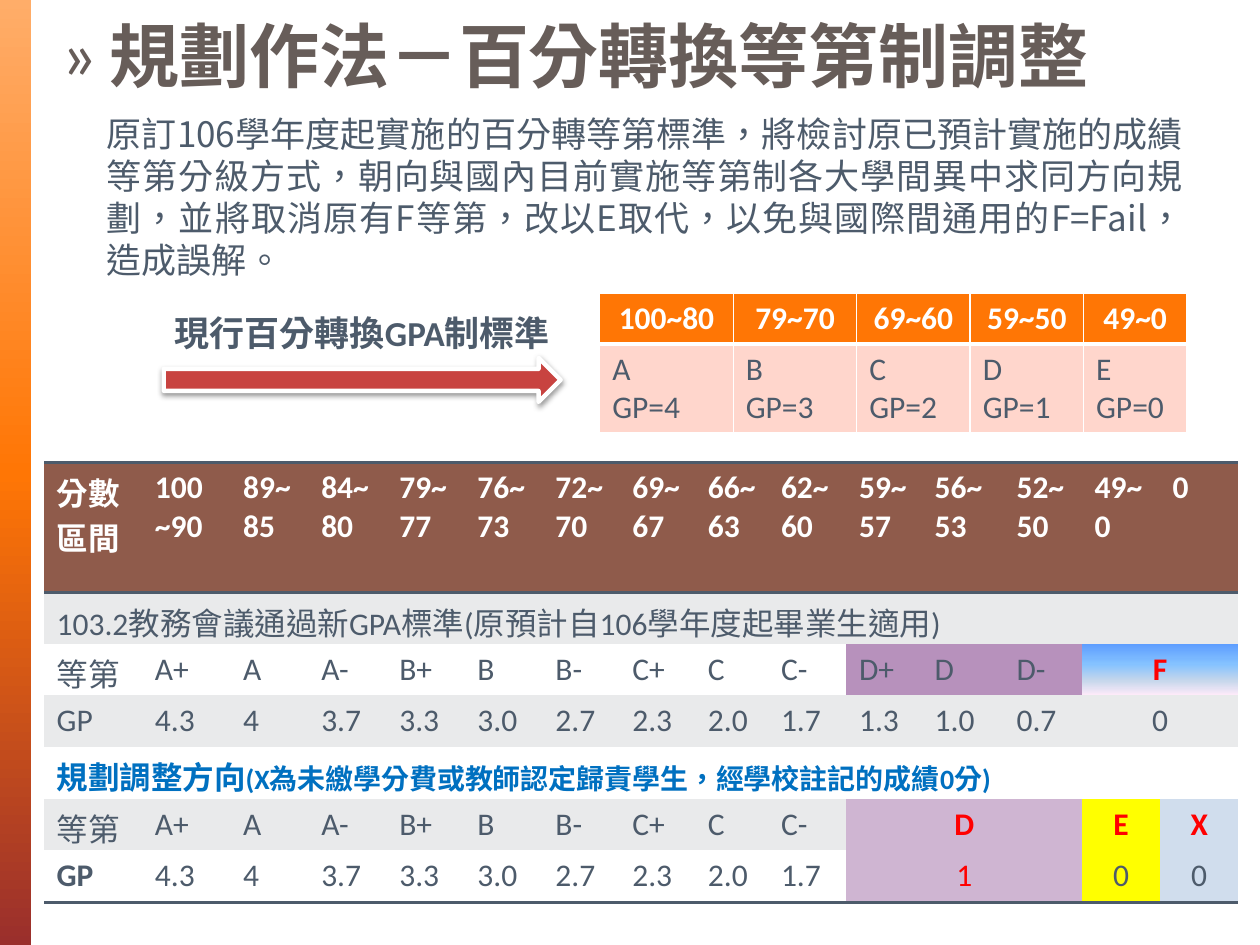
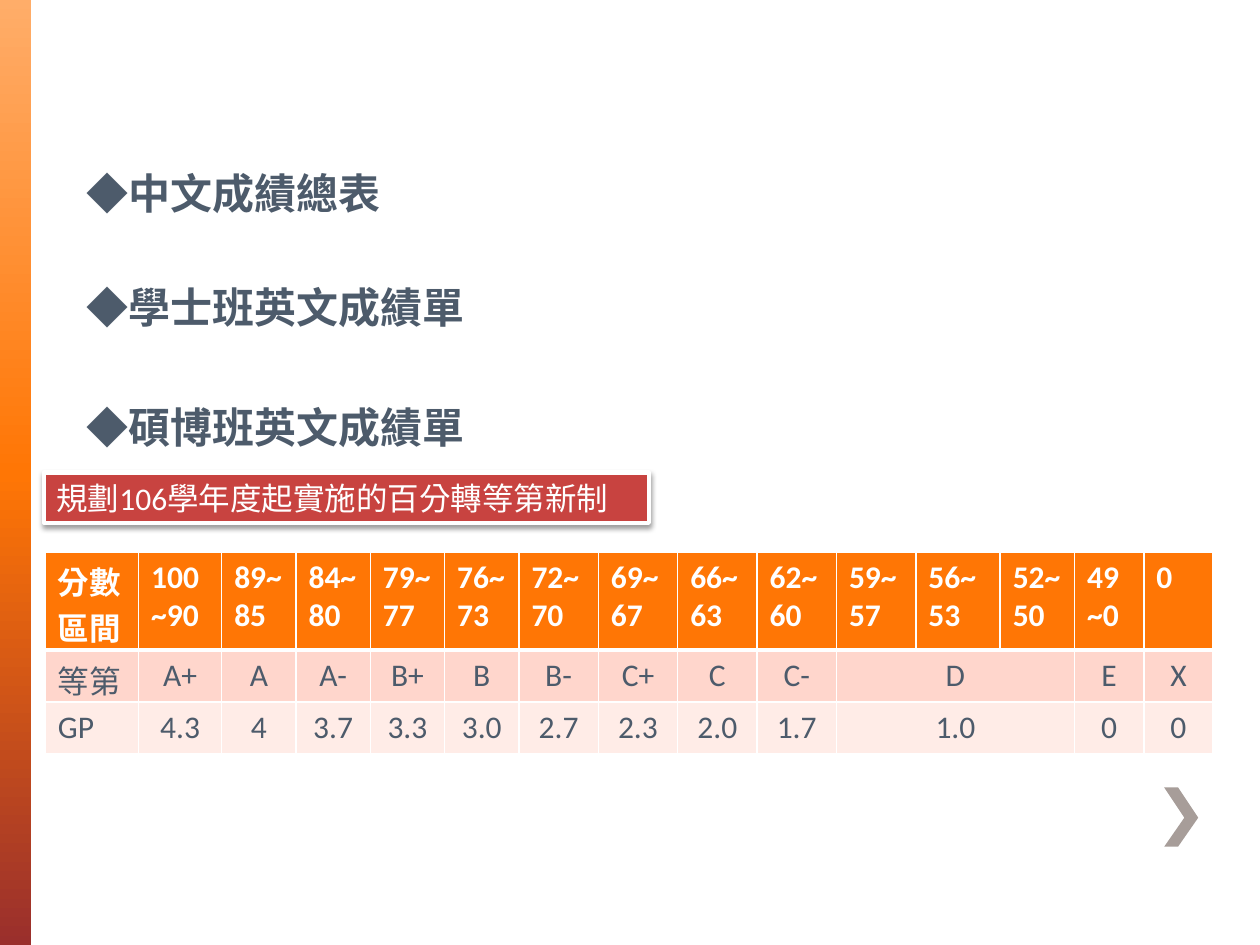
from dataclasses import dataclass, replace

from lxml.etree import SubElement
from pptx import Presentation
from pptx.dml.color import RGBColor
from pptx.enum.shapes import MSO_SHAPE
from pptx.enum.text import MSO_ANCHOR, PP_ALIGN
from pptx.oxml.ns import qn
from pptx.util import Inches, Pt

WHITE = RGBColor(0xFF, 0xFF, 0xFF)
SLATE = RGBColor(0x4D, 0x5B, 0x6B)
TAUPE = RGBColor(0x67, 0x5D, 0x59)
STONE = RGBColor(0xA7, 0x9D, 0x99)
APRICOT = RGBColor(0xFF, 0xAD, 0x69)
ORANGE = RGBColor(0xFF, 0x76, 0x05)
MAROON = RGBColor(0x9A, 0x2F, 0x2C)
CRIMSON = RGBColor(0xC8, 0x43, 0x40)
BROWN = RGBColor(0x8F, 0x5B, 0x4B)
GRAY = RGBColor(0xE9, 0xEA, 0xEB)
PINK = RGBColor(0xFF, 0xD6, 0xCC)
PALE_PINK = RGBColor(0xFF, 0xEC, 0xE7)
PURPLE = RGBColor(0xB7, 0x91, 0xBC)
LILAC = RGBColor(0xCF, 0xB5, 0xD2)
YELLOW = RGBColor(0xFF, 0xFF, 0x00)
PALE_BLUE = RGBColor(0xD0, 0xDD, 0xED)
RED = RGBColor(0xFF, 0x00, 0x00)
BLUE = RGBColor(0x00, 0x70, 0xC0)

BAND_STOPS = ((0, APRICOT), (50, ORANGE), (100, MAROON))
SKY_STOPS = (
    (0, RGBColor(0x5E, 0x9E, 0xFF)),
    (28, RGBColor(0x79, 0xB7, 0xFF)),
    (40, RGBColor(0x85, 0xC2, 0xFF)),
    (70, RGBColor(0xC4, 0xD6, 0xEB)),
    (100, RGBColor(0xFF, 0xEB, 0xFA)),
)

LATIN = "Calibri"
CJK = "Noto Sans CJK SC"
NO_GRID_STYLE = "{2D5ABB26-0587-4C30-8999-92F81FD0307C}"


@dataclass(frozen=True)
class Look:
    fill: object = None
    color: RGBColor = SLATE
    bold: bool = False
    align: object = PP_ALIGN.LEFT
    size: int = 18
    font: str = LATIN
    borders: tuple = ()


def add_color(parent, color):
    return SubElement(parent, qn("a:srgbClr"), val=str(color))


def paint(fill, properties, paint_with):
    if paint_with is None:
        fill.background()
    elif isinstance(paint_with, RGBColor):
        fill.solid()
        fill.fore_color.rgb = paint_with
    else:
        fill.background()
        gradient = properties.find(qn("a:noFill"))
        gradient.tag = qn("a:gradFill")
        stops = SubElement(gradient, qn("a:gsLst"))
        for percent, color in paint_with:
            add_color(SubElement(stops, qn("a:gs"), pos=str(percent * 1000)), color)
        SubElement(gradient, qn("a:lin"), ang="5400000", scaled="0")


class Deck:
    def __init__(self):
        self.presentation = Presentation()
        self.presentation.slide_width = Inches(10)
        self.presentation.slide_height = Inches(7.5)
        self.slide = None

    def new_slide(self):
        self.slide = self.presentation.slides.add_slide(self.presentation.slide_layouts[6])
        self.shape(MSO_SHAPE.RECTANGLE, 0, 0, 0.25, 7.5, BAND_STOPS)

    def style_run(self, run, look):
        run.font.size = Pt(look.size)
        run.font.bold = look.bold
        run.font.color.rgb = look.color
        run.font.name = look.font
        properties = run._r.get_or_add_rPr()
        properties.set("lang", "zh-TW")
        SubElement(properties, qn("a:ea"), typeface=CJK)

    def fill_text(self, frame, text, look):
        frame.text = text
        for paragraph in frame.paragraphs:
            paragraph.alignment = look.align
            for run in paragraph.runs:
                self.style_run(run, look)

    def shape(self, kind, left, top, width, height, fill, raised=False):
        shape = self.slide.shapes.add_shape(
            kind, Inches(left), Inches(top), Inches(width), Inches(height))
        shape.shadow.inherit = False
        paint(shape.fill, shape._element.spPr, fill)
        shape.line.fill.background()
        if raised:
            shape.line.color.rgb = WHITE
            shape.line.width = Pt(2.5)
            effects = shape._element.spPr.find(qn("a:effectLst"))
            shadow = SubElement(effects, qn("a:outerShdw"), blurRad=str(Pt(3.1)),
                                dist=str(Pt(1.6)), dir="5400000", rotWithShape="0")
            SubElement(add_color(shadow, "000000"), qn("a:alpha"), val="38000")
        return shape

    def label(self, left, top, width, height, text, look, raised=False):
        label = self.shape(MSO_SHAPE.RECTANGLE, left, top, width, height, look.fill, raised)
        label.text_frame.word_wrap = True
        label.text_frame.vertical_anchor = MSO_ANCHOR.MIDDLE
        self.fill_text(label.text_frame, text, look)

    def text(self, left, top, width, height, text, look, line_spacing):
        frame = self.slide.shapes.add_textbox(
            Inches(left), Inches(top), Inches(width), Inches(height)).text_frame
        frame.word_wrap = True
        self.fill_text(frame, text, look)
        frame.paragraphs[0].line_spacing = line_spacing
        return frame.paragraphs[0]

    def title(self, text):
        look = Look(color=TAUPE, bold=True, size=40, font=CJK)
        heading = self.text(0.39, 0.13, 9.45, 0.94, text, look, 0.9)
        properties = heading._p.get_or_add_pPr()
        properties.set("marL", str(Inches(0.38)))
        properties.set("indent", str(-Inches(0.38)))
        SubElement(properties, qn("a:buFont"), typeface=LATIN)
        SubElement(properties, qn("a:buChar"), char="»")

    def chevron(self, left, top):
        points = [(0, 0), (0.16, 0.24), (0, 0.47), (0.11, 0.47), (0.27, 0.24), (0.11, 0)]
        corners = [(Inches(left + x), Inches(top + y)) for x, y in points]
        builder = self.slide.shapes.build_freeform(*corners[0], scale=1.0)
        builder.add_line_segments(corners[1:], close=True)
        chevron = builder.convert_to_shape()
        chevron.shadow.inherit = False
        paint(chevron.fill, chevron._element.spPr, STONE)
        chevron.line.fill.background()

    def style_cell(self, cell, look):
        properties = cell._tc.get_or_add_tcPr()
        for side, color, points in look.borders:
            border = SubElement(properties, qn("a:ln" + side), w=str(Pt(points)))
            add_color(SubElement(border, qn("a:solidFill")), color)
        paint(cell.fill, properties, look.fill)

    def table(self, left, top, widths, heights, rows, looks, special=None, margin_bottom=0.05):
        special = special or {}
        table = self.slide.shapes.add_table(
            len(heights), len(widths), Inches(left), Inches(top),
            Inches(sum(widths)), Inches(sum(heights))).table
        table.first_row = table.horz_banding = False
        table._tbl.tblPr.find(qn("a:tableStyleId")).text = NO_GRID_STYLE
        for column, width in zip(table.columns, widths):
            column.width = Inches(width)
        for r, (height, texts) in enumerate(zip(heights, rows)):
            table.rows[r].height = Inches(height)
            for c, text in enumerate(texts):
                cell = table.cell(r, c)
                if text is not None:
                    origin = c
                look = replace(looks[r], **special.get((r, origin), {}))
                cell.margin_bottom = Inches(margin_bottom)
                self.style_cell(cell, look)
                if text is None:
                    continue
                self.fill_text(cell.text_frame, text, look)
                end = c
                while end + 1 < len(texts) and texts[end + 1] is None:
                    end += 1
                if end > c:
                    cell.merge(table.cell(r, end))
        return table


SCORE_RANGES = ["分數區間", "100~90", "89~85", "84~80", "79~77", "76~73", "72~70", "69~67",
                "66~63", "62~60", "59~57", "56~53", "52~50", "49~0", "0"]
GRADES = ["等第", "A+", "A", "A-", "B+", "B", "B-", "C+", "C", "C-"]
POINTS = ["GP", "4.3", "4", "3.7", "3.3", "3.0", "2.7", "2.3", "2.0", "1.7"]
NEW_GRADES = GRADES + ["D", None, None, "E", "X"]

WHITE_GRID = tuple((side, WHITE, 1) for side in "LRTB")
ORANGE_HEADER = Look(ORANGE, WHITE, True, borders=WHITE_GRID[:3] + (("B", WHITE, 3),))
BODY_GRID = (WHITE_GRID[0], WHITE_GRID[1], WHITE_GRID[3])
CENTER = PP_ALIGN.CENTER


def adjustment_slide(deck):
    deck.new_slide()
    deck.title("規劃作法－百分轉換等第制調整")
    deck.text(
        0.75, 0.84, 8.74, 1.45,
        "原訂106學年度起實施的百分轉等第標準，將檢討原已預計實施的成績等第分級方式，"
        "朝向與國內目前實施等第制各大學間異中求同方向規劃，並將取消原有F等第，"
        "改以E取代，以免與國際間通用的F=Fail，造成誤解。",
        Look(size=20, font=CJK, align=PP_ALIGN.JUSTIFY), Pt(24))

    rule_top, rule_bottom = ("T", SLATE, 2), ("B", SLATE, 2)
    gray, white = Look(GRAY), Look(WHITE)
    red_mark = dict(color=RED, bold=True, align=CENTER)
    special = {(2, c): dict(fill=PURPLE) for c in (10, 11, 12)}
    special |= {
        (2, 13): dict(fill=SKY_STOPS, **red_mark),
        (3, 13): dict(align=CENTER),
        (4, 0): dict(color=BLUE, bold=True),
        (6, 0): dict(bold=True),
        (6, 10): dict(fill=LILAC, color=RED, align=CENTER),
        (6, 13): dict(fill=YELLOW, align=CENTER),
        (6, 14): dict(fill=PALE_BLUE, align=CENTER),
    }
    special |= {(5, c): dict(fill=fill, **red_mark)
                for c, fill in ((10, LILAC), (13, YELLOW), (14, PALE_BLUE))}
    comparison = deck.table(
        0.35, 3.67,
        [0.78, 0.7] + [0.62] * 4 + [0.61, 0.6, 0.58, 0.62, 0.6, 0.65] + [0.62] * 3,
        [1.03] + [0.41] * 6,
        [SCORE_RANGES,
         ["103.2教務會議通過新GPA標準(原預計自106學年度起畢業生適用)"] + [None] * 14,
         GRADES + ["D+", "D", "D-", "F", None],
         POINTS + ["1.3", "1.0", "0.7", "0", None],
         ["規劃調整方向"] + [None] * 14,
         NEW_GRADES,
         POINTS + ["1", None, None, "0", "0"]],
        [Look(BROWN, WHITE, True, borders=(rule_top, rule_bottom)),
         gray, white, gray, white, gray, replace(white, borders=(rule_bottom,))],
        special, margin_bottom=0)
    remark = comparison.cell(4, 0).text_frame.paragraphs[0].add_run()
    remark.text = "(X為未繳學分費或教師認定歸責學生，經學校註記的成績0分)"
    deck.style_run(remark, Look(color=BLUE, bold=True, size=16))

    deck.table(
        4.76, 2.33, [1.06, 0.98, 0.9, 0.9, 0.82], [0.4, 0.7],
        [["100~80", "79~70", "69~60", "59~50", "49~0"],
         [f"{grade}\nGP={point}" for grade, point in zip("ABCDE", range(4, -1, -1))]],
        [replace(ORANGE_HEADER, align=CENTER), Look(PINK, borders=BODY_GRID)])
    deck.label(1.18, 2.28, 3.39, 0.71, "現行百分轉換GPA制標準",
               Look(WHITE, bold=True, align=CENTER, size=20))
    deck.shape(MSO_SHAPE.RIGHT_ARROW, 1.3, 2.84, 3.15, 0.35, CRIMSON, raised=True)


def transcript_slide(deck):
    deck.new_slide()
    deck.chevron(9.24, 6.25)
    transcripts = deck.table(
        0.59, 1.23, [4.08, 4.08], [3.23],
        [["◆中文成績總表\n◆學士班英文成績單\n◆碩博班英文成績單", ""]],
        [Look(bold=True, size=24, font=CJK)])
    for paragraph, gap in zip(transcripts.cell(0, 0).text_frame.paragraphs, (0, 30, 34)):
        paragraph.space_before = Pt(gap)

    deck.table(
        0.36, 4.38,
        [0.74, 0.66] + [0.59] * 4 + [0.63] * 5 + [0.67, 0.59, 0.55, 0.55],
        [0.78, 0.41, 0.41],
        [SCORE_RANGES, NEW_GRADES, POINTS + ["1.0", None, None, "0", "0"]],
        [ORANGE_HEADER] + [Look(fill, align=CENTER, borders=BODY_GRID)
                           for fill in (PINK, PALE_PINK)],
        {(r, 0): dict(align=PP_ALIGN.LEFT) for r in (1, 2)})
    deck.label(0.35, 3.75, 4.8, 0.4, "規劃106學年度起實施的百分轉等第新制",
               Look(CRIMSON, WHITE), raised=True)


def main():
    deck = Deck()
    adjustment_slide(deck)
    transcript_slide(deck)
    deck.presentation.save("out.pptx")


if __name__ == "__main__":
    main()
